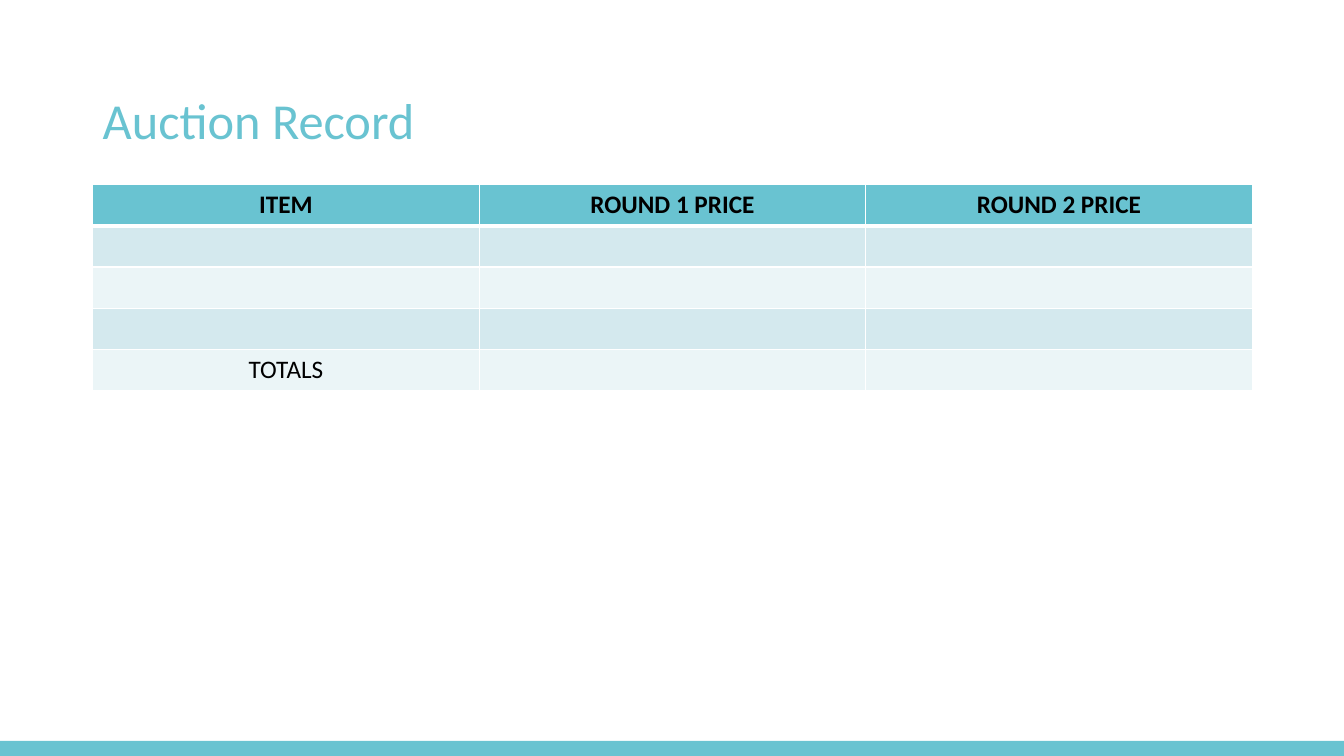
from lxml.etree import SubElement
from pptx import Presentation
from pptx.dml.color import RGBColor
from pptx.enum.shapes import MSO_SHAPE
from pptx.enum.text import MSO_ANCHOR, PP_ALIGN
from pptx.oxml.ns import qn
from pptx.util import Inches, Pt

# Content
TITLE = "Auction Record"
ROWS = [
    ("ITEM", "ROUND 1 PRICE", "ROUND 2 PRICE"),
    ("", "", ""),
    ("", "", ""),
    ("", "", ""),
    ("TOTALS", "", ""),
]

THEME = {
    "font": "Calibri", "title_size": 36, "cell_size": 18,
    "accent": "69C3D1", "text": "000000", "border": "FFFFFF",
    "bands": ("EBF5F7", "D4E9EE"),
}

# Layout in inches
SLIDE_W, SLIDE_H = 13.33, 7.5
LEFT, WIDTH = 0.92, 11.5
TITLE_TOP, TITLE_H = 0.89, 0.66
TABLE_TOP, ROW_H = 1.83, 0.41
FOOTER_H = 0.15


def set_font(font, size, color, bold=False):
    values = {"name": THEME["font"], "size": Pt(size), "bold": bold}
    for name, value in values.items():
        setattr(font, name, value)
    font.color.rgb = RGBColor.from_string(color)


def set_borders(cell, widths):
    tc_pr = cell._tc.get_or_add_tcPr()
    for side, width in widths.items():
        ln = SubElement(tc_pr, qn(f"a:ln{side}"), w=str(Pt(width)))
        fill = SubElement(ln, qn("a:solidFill"))
        SubElement(fill, qn("a:srgbClr"), val=THEME["border"])


def add_footer(s):
    bar = s.shapes.add_shape(
        MSO_SHAPE.RECTANGLE, 0, Inches(SLIDE_H - FOOTER_H),
        Inches(SLIDE_W), Inches(FOOTER_H))
    bar.shadow.inherit = False
    bar.fill.solid()
    bar.fill.fore_color.rgb = RGBColor.from_string(THEME["accent"])
    bar.line.fill.background()


def add_title(s):
    box = s.shapes.add_textbox(
        Inches(LEFT), Inches(TITLE_TOP), Inches(WIDTH), Inches(TITLE_H))
    tf = box.text_frame
    tf.word_wrap = True
    tf.vertical_anchor = MSO_ANCHOR.MIDDLE
    p = tf.paragraphs[0]
    p.line_spacing = 0.9
    r = p.add_run()
    r.text = TITLE
    set_font(r.font, THEME["title_size"], THEME["accent"])


def add_record(s):
    n_rows, n_cols = len(ROWS), len(ROWS[0])
    table = s.shapes.add_table(
        n_rows, n_cols, Inches(LEFT), Inches(TABLE_TOP),
        Inches(WIDTH), Inches(ROW_H * n_rows)).table
    for i, row in enumerate(ROWS):
        header = i == 0
        color = THEME["accent"] if header else THEME["bands"][i % 2]
        # A thick rule separates the header from the body
        widths = {"L": 1, "R": 1, "T": 3 if i == 1 else 1, "B": 3 if header else 1}
        for j, text in enumerate(row):
            cell = table.cell(i, j)
            set_borders(cell, widths)
            cell.fill.solid()
            cell.fill.fore_color.rgb = RGBColor.from_string(color)
            p = cell.text_frame.paragraphs[0]
            p.alignment = PP_ALIGN.CENTER
            if text:
                r = p.add_run()
                r.text = text
                set_font(r.font, THEME["cell_size"], THEME["text"], header)


def main():
    prs = Presentation()
    prs.slide_width, prs.slide_height = Inches(SLIDE_W), Inches(SLIDE_H)
    s = prs.slides.add_slide(prs.slide_layouts[6])
    add_footer(s)
    add_title(s)
    add_record(s)
    prs.save("out.pptx")


if __name__ == "__main__":
    main()
